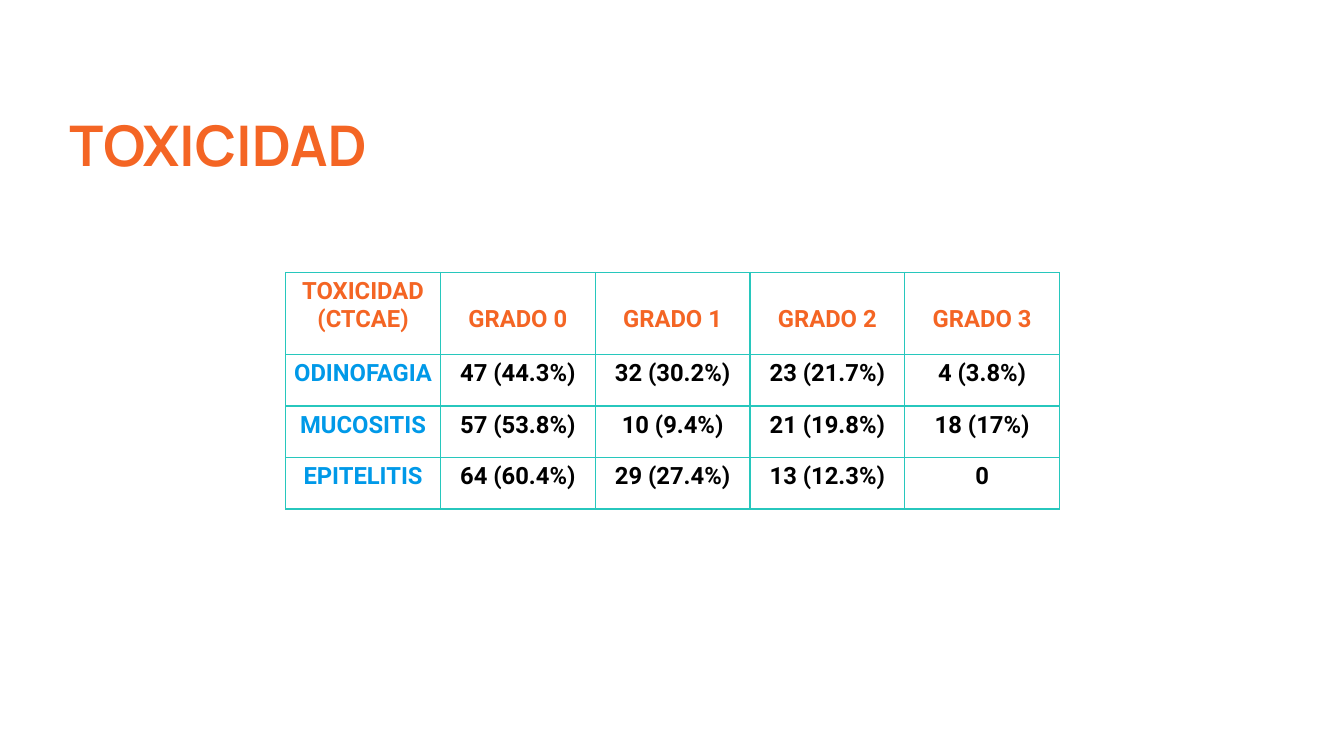
from lxml import etree
from pptx import Presentation
from pptx.dml.color import RGBColor
from pptx.enum.text import MSO_ANCHOR, PP_ALIGN
from pptx.oxml.ns import qn
from pptx.util import Cm, Pt

CENTER = PP_ALIGN.CENTER
TOP = MSO_ANCHOR.TOP
BOTTOM = MSO_ANCHOR.BOTTOM

COLORS = {
    "orange": "F46524",
    "blue": "0099E8",
    "black": "000000",
    "white": "FFFFFF",
    "teal": "27C7BD",
}
TITLE_FONT = "Manrope"
TABLE_FONT = "Roboto"

TOXICITY_ROWS = [
    ["TOXICIDAD\n(CTCAE)", "GRADO 0", "GRADO 1", "GRADO 2", "GRADO 3"],
    ["ODINOFAGIA", "47 (44.3%)", "32 (30.2%)", "23 (21.7%)", "4 (3.8%)"],
    ["MUCOSITIS", "57 (53.8%)", "10 (9.4%)", "21 (19.8%)", "18 (17%)"],
    ["EPITELITIS", "64 (60.4%)", "29 (27.4%)", "13 (12.3%)", "0"],
]
COLUMN_WIDTH = Cm(7.8)
HEADER_HEIGHT = Cm(4.12)
ROW_HEIGHT = Cm(2.6)
CELL_MARGIN = Cm(0.25)
HEADER_LINE = Cm(1.41)


def style_font(paragraph, name, size, color):
    font = paragraph.font
    font.name = name
    font.size = Pt(size)
    font.bold = True
    font.color.rgb = RGBColor.from_string(COLORS[color])


def add_title(slide, text):
    title = slide.shapes.add_textbox(Cm(3.35), Cm(-3.84), Cm(61.04), Cm(12.9))
    frame = title.text_frame
    frame.word_wrap = True
    frame.vertical_anchor = BOTTOM
    frame.margin_left = frame.margin_right = Cm(0.15)
    frame.margin_top = frame.margin_bottom = Cm(0.15)
    heading = frame.paragraphs[0]
    heading.text = text
    heading.line_spacing = 0.8
    style_font(heading, TITLE_FONT, 80, "orange")


def add_borders(cell):
    properties = cell._tc.get_or_add_tcPr()
    for side in ("a:lnL", "a:lnR", "a:lnT", "a:lnB"):
        line = etree.SubElement(properties, qn(side), w=str(Pt(2.25)))
        fill = etree.SubElement(line, qn("a:solidFill"))
        etree.SubElement(fill, qn("a:srgbClr"), val=COLORS["teal"])


def fill_cell(cell, text, color):
    add_borders(cell)
    cell.fill.solid()
    cell.fill.fore_color.rgb = RGBColor.from_string(COLORS["white"])
    cell.vertical_anchor = TOP
    cell.margin_left = cell.margin_right = CELL_MARGIN
    cell.margin_top = cell.margin_bottom = CELL_MARGIN
    cell.text = text
    for paragraph in cell.text_frame.paragraphs:
        paragraph.alignment = CENTER
        style_font(paragraph, TABLE_FONT, 34, color)


def cell_color(row, column):
    if row == 0:
        return "orange"
    return "blue" if column == 0 else "black"


def add_toxicity_table(slide, rows):
    row_count, column_count = len(rows), len(rows[0])
    table = slide.shapes.add_table(
        row_count, column_count, Cm(14.4), Cm(13.74),
        COLUMN_WIDTH * column_count,
        HEADER_HEIGHT + ROW_HEIGHT * (row_count - 1),
    ).table
    table.horz_banding = False
    for column in table.columns:
        column.width = COLUMN_WIDTH
    for row, values in enumerate(rows):
        table.rows[row].height = ROW_HEIGHT if row else HEADER_HEIGHT
        for column, value in enumerate(values):
            fill_cell(table.cell(row, column), value, cell_color(row, column))
    for column in range(1, column_count):
        table.cell(0, column).margin_top = CELL_MARGIN + HEADER_LINE


def main():
    presentation = Presentation()
    presentation.slide_width = Cm(67.74)
    presentation.slide_height = Cm(38.1)
    slide = presentation.slides.add_slide(presentation.slide_layouts[6])
    add_title(slide, "TOXICIDAD")
    add_toxicity_table(slide, TOXICITY_ROWS)
    presentation.save("out.pptx")


if __name__ == "__main__":
    main()
